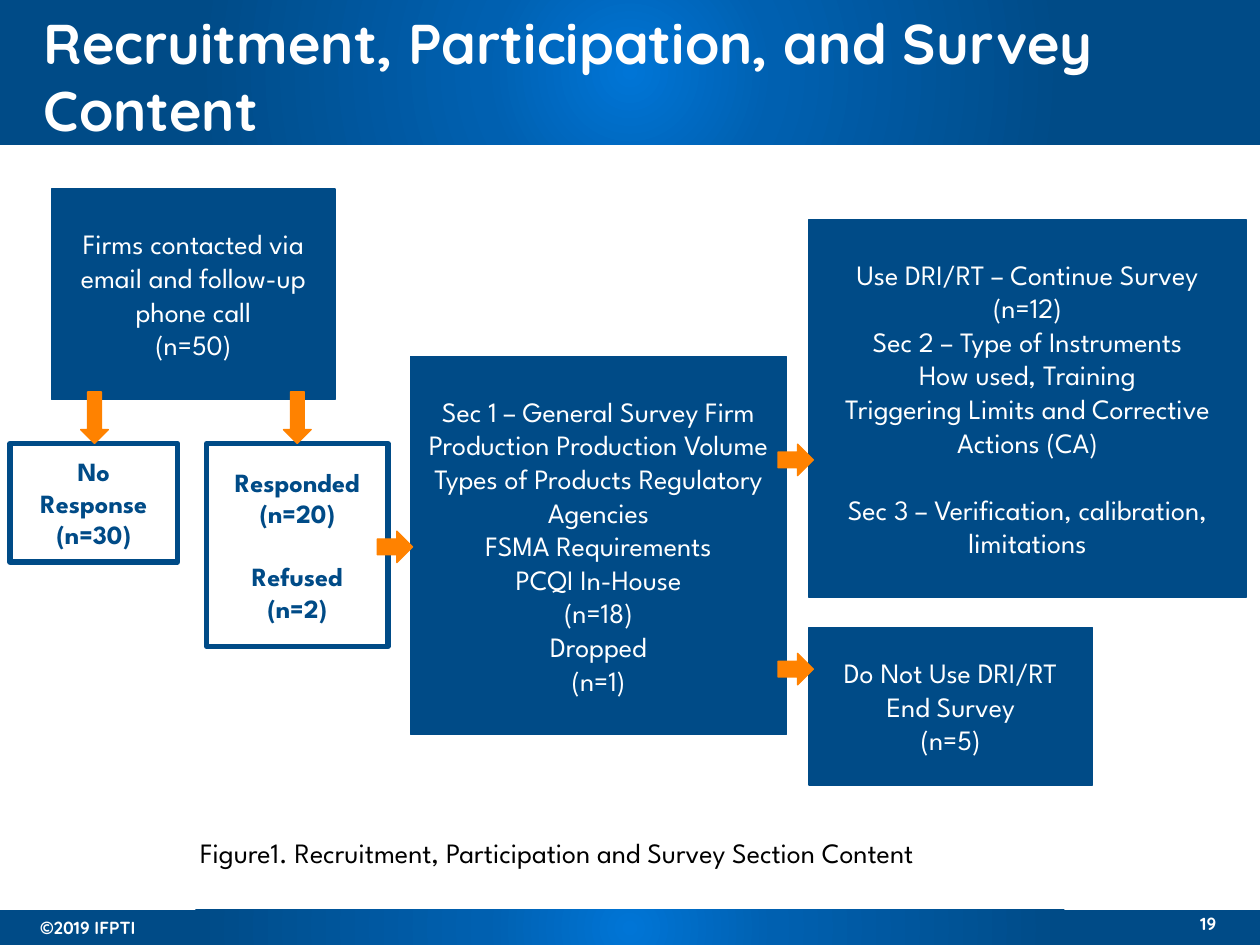
from dataclasses import dataclass

from pptx import Presentation
from pptx.dml.color import RGBColor
from pptx.enum.shapes import MSO_SHAPE as Preset
from pptx.enum.text import MSO_ANCHOR as Anchor, PP_ALIGN as Align
from pptx.oxml import parse_xml
from pptx.oxml.ns import nsdecls, qn
from pptx.util import Inches, Pt


@dataclass(frozen=True)
class Theme:
    blue: str = "004B87"
    orange: str = "FF8200"
    white: str = "FFFFFF"
    black: str = "000000"
    band_stops: tuple = ((0, "0075D6"), (23, "0060B0"), (69, "004B87"), (97, "004B87"))
    heading_font: str = "Quicksand"
    body_font: str = "League Spartan"
    title_size: int = 32
    body_size: int = 16
    outcome_size: int = 15
    footer_size: int = 10


THEME = Theme()


def write_text(shape, groups, *, size, color, font=THEME.body_font, bold=False,
               align=Align.LEFT, anchor=Anchor.TOP, wrap=True):
    frame = shape.text_frame
    frame.word_wrap = wrap
    frame.vertical_anchor = anchor
    lines = [(line, number > 0 and index == 0)
             for number, group in enumerate(groups)
             for index, line in enumerate(group)]
    for index, (line, starts_group) in enumerate(lines):
        paragraph = frame.add_paragraph() if index else frame.paragraphs[0]
        paragraph.alignment = align
        if starts_group:
            paragraph.space_before = Pt(size * 1.2)
        run = paragraph.add_run()
        run.text = line
        run.font.name = font
        run.font.size = Pt(size)
        run.font.bold = bold
        run.font.color.rgb = RGBColor.from_string(color)


def add_label(slide, box, text, **text_format):
    label = slide.shapes.add_textbox(*map(Inches, box))
    write_text(label, [[text]], **text_format)


def add_preset(slide, preset, box, fill, line, line_width=0.75):
    shape = slide.shapes.add_shape(preset, *map(Inches, box))
    shape.shadow.inherit = False
    shape.fill.solid()
    shape.fill.fore_color.rgb = RGBColor.from_string(fill)
    shape.line.color.rgb = RGBColor.from_string(line)
    shape.line.width = Pt(line_width)
    return shape


def add_band(slide, top, height):
    band = add_preset(slide, Preset.RECTANGLE, (0, top, 10, height), THEME.blue, THEME.blue)
    band.line.fill.background()
    stops = "".join(
        f'<a:gs pos="{position * 1000}"><a:srgbClr val="{color}"/></a:gs>'
        for position, color in THEME.band_stops)
    gradient = parse_xml(
        f'<a:gradFill {nsdecls("a")} rotWithShape="1"><a:gsLst>{stops}</a:gsLst>'
        '<a:path path="circle"><a:fillToRect l="50000" t="50000" r="50000" b="50000"/>'
        '</a:path></a:gradFill>')
    properties = band.element.spPr
    properties.replace(properties.find(qn("a:solidFill")), gradient)


def add_step(slide, box, groups):
    step = add_preset(slide, Preset.RECTANGLE, box, THEME.blue, THEME.blue)
    write_text(step, groups, size=THEME.body_size, color=THEME.white,
               align=Align.CENTER, anchor=Anchor.MIDDLE)


def add_outcome(slide, box, groups):
    outcome = add_preset(slide, Preset.RECTANGLE, box, THEME.white, THEME.blue, 3)
    write_text(outcome, groups, size=THEME.outcome_size, color=THEME.blue, bold=True,
               align=Align.CENTER, anchor=Anchor.MIDDLE)


def add_arrow(slide, box, rotation=0):
    arrow = add_preset(slide, Preset.DOWN_ARROW, box, THEME.orange, THEME.orange)
    arrow.rotation = rotation


def add_frame(slide):
    add_band(slide, 0, 1.15)
    add_band(slide, 7.22, 0.29)
    heading = {"font": THEME.heading_font, "color": THEME.white, "bold": True}
    add_label(slide, (0.22, 7.23, 1.33, 0.27), "©2019 IFPTI",
              size=THEME.footer_size, **heading)
    add_label(slide, (8.79, 7.2, 0.96, 0.27), "19",
              size=THEME.footer_size, align=Align.RIGHT, **heading)
    add_label(slide, (0.25, 0.13, 9.32, 0.94),
              "Recruitment, Participation, and Survey Content",
              size=THEME.title_size, anchor=Anchor.MIDDLE, **heading)


def add_flow(slide):
    add_step(slide, (0.41, 1.5, 2.25, 1.67), [
        ["Firms contacted via email and follow-up phone call", "(n=50)"]])
    add_step(slide, (3.26, 2.83, 2.98, 3), [[
        "Sec 1 – General Survey Firm Production Production Volume "
        "Types of Products Regulatory Agencies",
        "FSMA Requirements", "PCQI In-House", "(n=18)", "Dropped", "(n=1)"]])
    add_step(slide, (6.42, 1.74, 3.47, 3), [
        ["Use DRI/RT – Continue Survey", "(n=12)", "Sec 2 – Type of Instruments",
         "How used, Training", "Triggering Limits and Corrective Actions (CA)"],
        ["Sec 3 – Verification, calibration, limitations"]])
    add_step(slide, (6.42, 4.98, 2.25, 1.25), [
        ["Do Not Use DRI/RT", "End Survey", "(n=5)"]])
    add_outcome(slide, (0.08, 3.52, 1.33, 0.94), [["No Response", "(n=30)"]])
    add_outcome(slide, (1.64, 3.52, 1.44, 1.61), [
        ["Responded", "(n=20)"], ["Refused", "(n=2)"]])
    for left in (0.64, 2.25):
        add_arrow(slide, (left, 3.11, 0.22, 0.41))
    for left, top in ((3.01, 4.2), (6.19, 3.51), (6.19, 5.17)):
        add_arrow(slide, (left, top, 0.25, 0.28), rotation=270)


def main():
    presentation = Presentation()
    presentation.slide_width = Inches(10)
    presentation.slide_height = Inches(7.5)
    slide = presentation.slides.add_slide(presentation.slide_layouts[6])
    add_frame(slide)
    add_flow(slide)
    add_label(slide, (1.49, 6.58, 7.03, 0.37),
              "Figure1. Recruitment, Participation and Survey Section Content",
              size=THEME.body_size, color=THEME.black, wrap=False)
    presentation.save("out.pptx")


if __name__ == "__main__":
    main()
